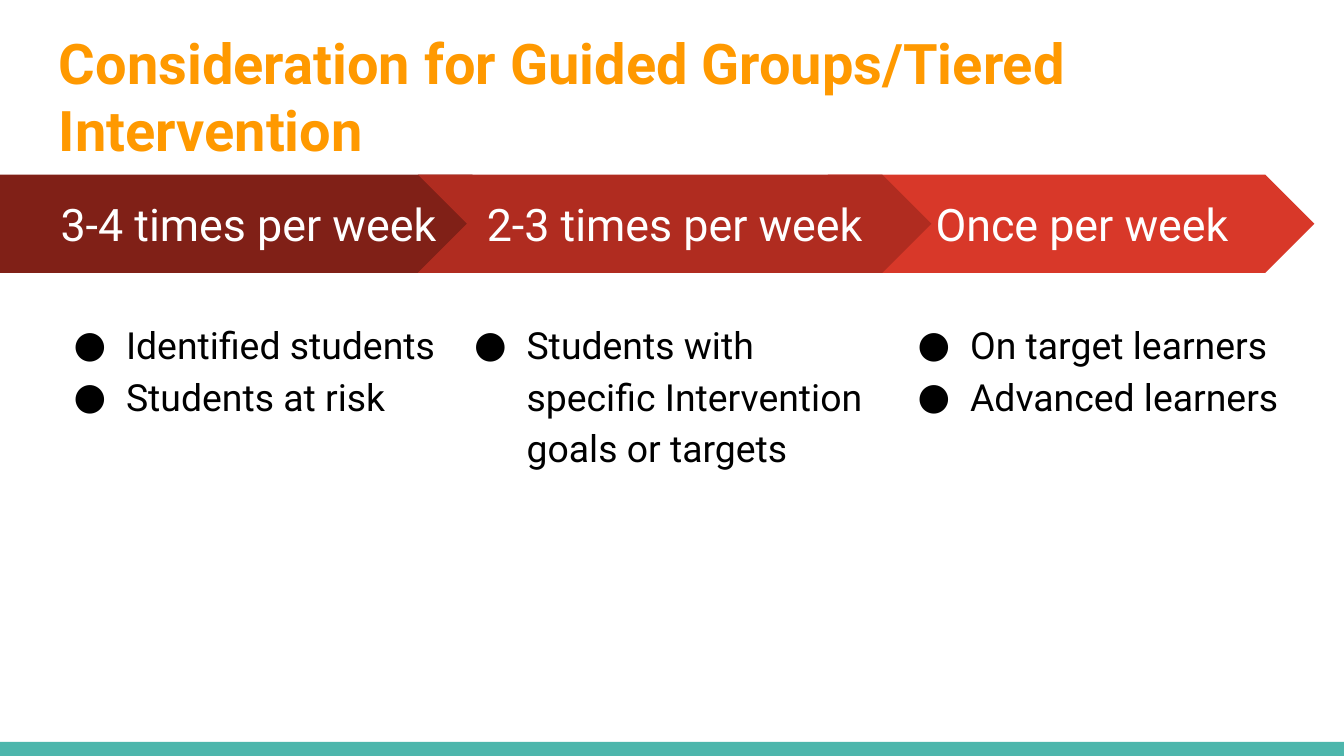
"""Build a slide of three intervention tiers, each an arrow above a bulleted list."""
from dataclasses import dataclass

import pptx
import pptx.dml.color
import pptx.enum.shapes
import pptx.enum.text
import pptx.oxml.ns
import pptx.util
from lxml import etree

Inches = pptx.util.Inches
SHAPES = pptx.enum.shapes.MSO_SHAPE
ALIGN = pptx.enum.text.PP_ALIGN
ANCHOR = pptx.enum.text.MSO_ANCHOR
FONT = "Roboto"
INSET = 0.1
ARROW_TOP, ARROW_HEIGHT = 1.3, 0.73
LIST_TOP, LIST_HEIGHT = 2.25, 2.86


@dataclass
class Tier:
    frequency: str
    outline: pptx.enum.shapes.MSO_SHAPE
    fill: str
    arrow_left: float
    arrow_width: float
    list_left: float
    list_width: float
    learners: list[str]
    inset_left: float = INSET


TIERS = [
    Tier("Once per week", SHAPES.CHEVRON, "D83829", 6.16, 3.62, 6.62, 3.23,
         ["On target learners", "Advanced learners"], inset_left=0.26),
    Tier("3-4 times per week", SHAPES.PENTAGON, "802017", 0, 3.88, 0.34, 3.17,
         ["Identified students", "Students at risk"]),
    Tier("2-3 times per week", SHAPES.CHEVRON, "B02C20", 3.11, 3.82, 3.32, 3.23,
         ["Students with specific Intervention goals or targets"]),
]


def rgb(value: str) -> pptx.dml.color.RGBColor:
    return pptx.dml.color.RGBColor.from_string(value)


def add_block(slide, outline, left: float, top: float, width: float, height: float, fill: str):
    block = slide.shapes.add_shape(outline, Inches(left), Inches(top), Inches(width), Inches(height))
    block.shadow.inherit = False
    block.fill.solid()
    block.fill.fore_color.rgb = rgb(fill)
    block.line.fill.background()
    return block


def set_insets(frame, left: float = INSET) -> None:
    frame.word_wrap = True
    frame.margin_left = Inches(left)
    frame.margin_right = frame.margin_top = frame.margin_bottom = Inches(INSET)


def write(paragraph, text: str, size: int, color: str, bold: bool = False) -> None:
    paragraph.text = text
    font = paragraph.font
    font.name, font.size, font.bold = FONT, pptx.util.Pt(size), bold
    font.color.rgb = rgb(color)


def add_bullet(paragraph) -> None:
    properties = paragraph._p.get_or_add_pPr()
    properties.set("marL", str(Inches(0.5)))
    properties.set("indent", str(Inches(-0.39)))
    defaults = properties.find(pptx.oxml.ns.qn("a:defRPr"))
    for tag, name, value in (("a:buFont", "typeface", FONT), ("a:buChar", "char", "●")):
        defaults.addprevious(etree.Element(pptx.oxml.ns.qn(tag), {name: value}))


def add_tier(slide, tier: Tier) -> None:
    arrow = add_block(slide, tier.outline, tier.arrow_left, ARROW_TOP,
                      tier.arrow_width, ARROW_HEIGHT, tier.fill)
    arrow.adjustments[0] = 0.5
    set_insets(arrow.text_frame, tier.inset_left)
    arrow.text_frame.vertical_anchor = ANCHOR.MIDDLE
    label = arrow.text_frame.paragraphs[0]
    label.alignment = ALIGN.CENTER
    write(label, tier.frequency, 24, "FFFFFF")

    frame = slide.shapes.add_textbox(Inches(tier.list_left), Inches(LIST_TOP),
                                     Inches(tier.list_width), Inches(LIST_HEIGHT)).text_frame
    set_insets(frame)
    for index, learner in enumerate(tier.learners):
        item = frame.add_paragraph() if index else frame.paragraphs[0]
        item.line_spacing = 1.15
        write(item, learner, 20, "000000")
        add_bullet(item)


def main() -> None:
    deck = pptx.Presentation()
    deck.slide_width = Inches(10)
    deck.slide_height = deck.slide_width * 9 // 16
    slide = deck.slides.add_slide(deck.slide_layouts[6])
    slide.background.fill.solid()
    slide.background.fill.fore_color.rgb = rgb("FFFFFF")

    add_block(slide, SHAPES.RECTANGLE, 0, 5.52, 10, 0.11, "4DB6AC")
    title = slide.shapes.add_textbox(Inches(0.34), Inches(0.11), Inches(9.32), Inches(1.15)).text_frame
    set_insets(title)
    write(title.paragraphs[0], "Consideration for Guided Groups/Tiered Intervention",
          30, "FF9900", bold=True)
    for tier in TIERS:
        add_tier(slide, tier)
    deck.save("out.pptx")


if __name__ == "__main__":
    main()
